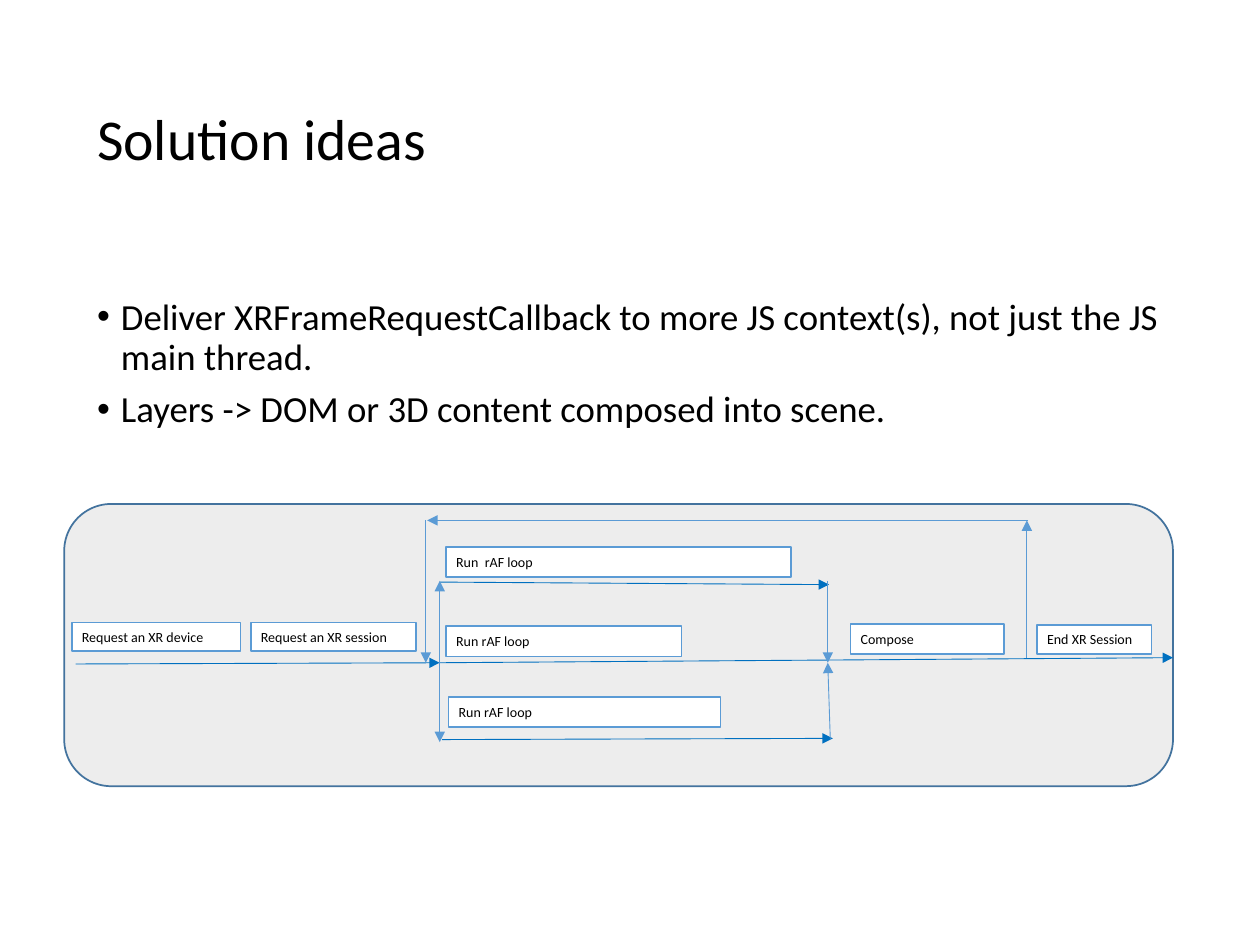
"""Build the "Solution ideas" slide with its XR session flow diagram."""
from lxml import etree
from pptx import Presentation
from pptx.dml.color import RGBColor
from pptx.enum.shapes import MSO_CONNECTOR, MSO_SHAPE
from pptx.enum.text import MSO_ANCHOR, PP_ALIGN
from pptx.oxml.ns import qn
from pptx.util import Inches, Pt

STRAIGHT = MSO_CONNECTOR.STRAIGHT
RECTANGLE = MSO_SHAPE.RECTANGLE
ROUNDED_RECTANGLE = MSO_SHAPE.ROUNDED_RECTANGLE
MIDDLE = MSO_ANCHOR.MIDDLE
LEFT = PP_ALIGN.LEFT

BLACK = RGBColor(0x00, 0x00, 0x00)
WHITE = RGBColor(0xFF, 0xFF, 0xFF)
GRAY = RGBColor(0xED, 0xED, 0xED)
NAVY = RGBColor(0x43, 0x73, 0x9E)
LIGHT_BLUE = RGBColor(0x5B, 0x9B, 0xD5)
BLUE = RGBColor(0x00, 0x70, 0xC0)


def set_text(shape, lines, size, anchor):
    frame = shape.text_frame
    frame.text = "\n".join(lines)
    frame.word_wrap = True
    frame.vertical_anchor = anchor
    frame.margin_left = frame.margin_right = Inches(0.08)
    frame.margin_top = frame.margin_bottom = Inches(0.04)
    for paragraph in frame.paragraphs:
        paragraph.alignment = LEFT
        paragraph.font.name = "Calibri"
        paragraph.font.size = Pt(size)
        paragraph.font.color.rgb = BLACK


def add_box(kind, left, top, width, height, fill, line):
    shape = slide.shapes.add_shape(
        kind, Inches(left), Inches(top), Inches(width), Inches(height))
    shape.shadow.inherit = False
    shape.fill.solid()
    shape.fill.fore_color.rgb = fill
    shape.line.color.rgb = line
    shape.line.width = Pt(1)
    return shape


presentation = Presentation()
presentation.slide_width = Inches(10)
presentation.slide_height = Inches(7.5)
slide = presentation.slides.add_slide(presentation.slide_layouts[1])

title = slide.shapes.title
title.left, title.top = Inches(0.69), Inches(0.4)
title.width, title.height = Inches(8.62), Inches(1.45)
set_text(title, ["Solution ideas"], 33, MIDDLE)
title.text_frame.paragraphs[0].line_spacing = 0.9

body = slide.placeholders[1]
body.left, body.top = Inches(0.69), Inches(2.33)
body.width, body.height = Inches(8.62), Inches(1.32)
set_text(body, [
    "Deliver XRFrameRequestCallback to more JS context(s), not just the JS main thread.",
    "Layers -> DOM or 3D content composed into scene.",
], 21, MSO_ANCHOR.TOP)
for paragraph in body.text_frame.paragraphs:
    paragraph.line_spacing = 0.9
    paragraph.space_before = Pt(7.5)
    properties = paragraph._p.get_or_add_pPr()
    properties.set("marL", str(Inches(0.19)))
    properties.set("indent", str(-Inches(0.19)))

add_box(ROUNDED_RECTANGLE, 0.51, 4, 8.8, 2.24, GRAY, NAVY)

steps = [
    ("Request an XR device", 0.57, 4.94, 1.34, 0.23),
    ("Request an XR session", 1.99, 4.94, 1.31, 0.23),
    ("Run  rAF loop", 3.54, 4.34, 2.74, 0.24),
    ("Run rAF loop", 3.54, 4.97, 1.87, 0.24),
    ("Run rAF loop", 3.56, 5.53, 2.16, 0.24),
    ("Compose", 6.75, 4.95, 1.22, 0.24),
    ("End XR Session", 8.23, 4.96, 0.91, 0.23),
]
for label, left, top, width, height in steps:
    step = add_box(RECTANGLE, left, top, width, height, WHITE, LIGHT_BLUE)
    set_text(step, [label], 8, MIDDLE)

timelines = [
    (0.6, 5.27, 3.49, 5.26),
    (3.49, 4.62, 6.58, 4.64),
    (3.49, 5.26, 9.31, 5.22),
    (3.51, 5.87, 6.61, 5.86),
]
branches = [
    (3.49, 5.26, 3.49, 4.61),
    (3.49, 5.26, 3.49, 5.89),
    (6.59, 5.87, 6.57, 5.26),
    (6.57, 4.61, 6.57, 5.26),
    (8.15, 5.22, 8.15, 4.13),
    (8.16, 4.13, 3.39, 4.13),
    (3.38, 4.13, 3.38, 5.26),
]
for color, arrows in ((BLUE, timelines), (LIGHT_BLUE, branches)):
    for ends in arrows:
        arrow = slide.shapes.add_connector(STRAIGHT, *map(Inches, ends))
        arrow.line.color.rgb = color
        arrow.line.width = Pt(0.5)
        etree.SubElement(arrow.line._get_or_add_ln(), qn("a:tailEnd"), type="triangle")
        etree.SubElement(arrow._element.spPr, qn("a:effectLst"))

presentation.save("out.pptx")
